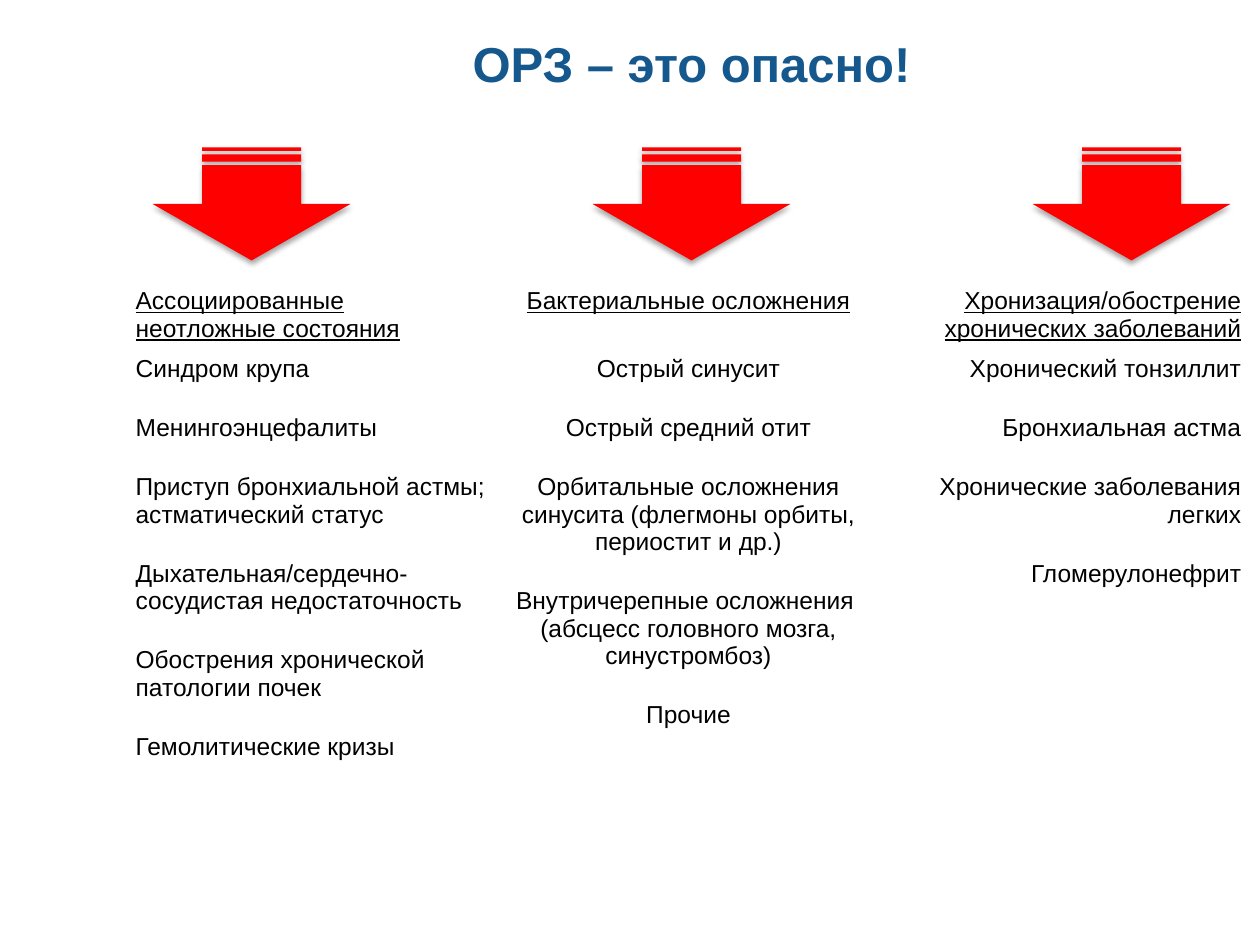
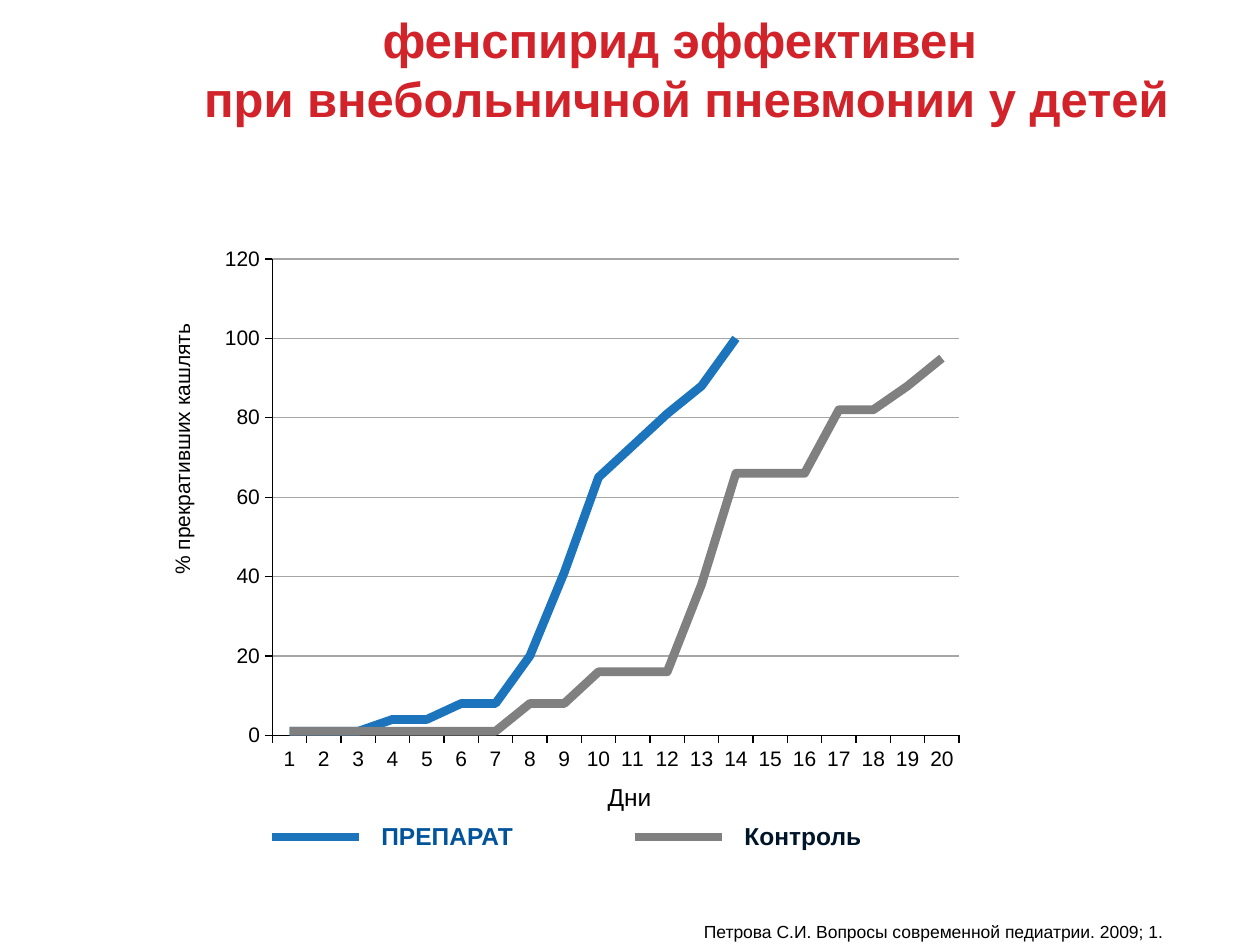
from lxml import etree
from pptx import Presentation, util as u
from pptx.chart.data import CategoryChartData
from pptx.dml.color import RGBColor
from pptx.enum import chart as ch, shapes, text
from pptx.oxml import parse_xml
from pptx.oxml.ns import nsdecls, qn

SCALE = 914400 / 126
FONT = "Arial"
COLORS = {"black": "000000", "navy": "15588D", "crimson": "D2232A",
          "red": "FF0000", "blue": "1C75BC", "gray": "808080",
          "grid": "A6A6A6", "drug": "01539C", "control": "001527"}
LEFT, CENTER, RIGHT = (text.PP_ALIGN.LEFT, text.PP_ALIGN.CENTER,
                       text.PP_ALIGN.RIGHT)

COLUMNS = [
    (LEFT, "Ассоциированные неотложные состояния",
     ["Синдром крупа",
      "Менингоэнцефалиты",
      "Приступ бронхиальной астмы; астматический статус",
      "Дыхательная/сердечно-сосудистая недостаточность",
      "Обострения хронической патологии почек",
      "Гемолитические кризы"]),
    (CENTER, "Бактериальные осложнения",
     ["Острый синусит",
      "Острый средний отит",
      "Орбитальные осложнения синусита (флегмоны орбиты, периостит и др.)",
      "Внутричерепные осложнения \n(абсцесс головного мозга, синустромбоз)",
      "Прочие"]),
    (RIGHT, "Хронизация/обострение хронических заболеваний",
     ["Хронический тонзиллит",
      "Бронхиальная астма",
      "Хронические заболевания легких",
      "Гломерулонефрит"]),
]

# name, line colour, label colour, label width, values
SERIES = [
    ("ПРЕПАРАТ", "blue", "drug", 188,
     [1, 1, 1, 4, 4, 8, 8, 20, 41, 65, 73, 81, 88, 100] + [None] * 6),
    ("Контроль", "gray", "control", 246,
     [1] * 7 + [8, 8, 16, 16, 16, 38, 66, 66, 66, 82, 82, 88, 95]),
]


def px(*nums):
    return [u.Emu(round(n * SCALE)) for n in nums]


def rgb(name):
    return RGBColor.from_string(COLORS[name])


def style(font, size, color="black", bold=False):
    font.name, font.size, font.bold = FONT, u.Pt(size), bold
    font.color.rgb = rgb(color)


def write(par, words, size, color="black", bold=False, align=LEFT):
    par.text = words
    par.alignment = align
    style(par.font, size, color, bold)


def add_title(slide, words, color, box):
    title = slide.shapes.title
    title.left, title.top, title.width, title.height = px(*box)
    frame = title.text_frame
    frame.auto_size = text.MSO_AUTO_SIZE.NONE
    frame.vertical_anchor = text.MSO_ANCHOR.MIDDLE
    write(frame.paragraphs[0], words, 28, color, True, CENTER)


def add_label(slide, words, box, size, color="black", bold=False,
              align=LEFT, wrap=True, turn=0):
    label = slide.shapes.add_textbox(*px(*box))
    label.rotation = turn
    label.text_frame.word_wrap = wrap
    write(label.text_frame.paragraphs[0], words, size, color, bold, align)


def add_arrow(slide, left):
    arrow = slide.shapes.add_shape(
        shapes.MSO_SHAPE.STRIPED_RIGHT_ARROW, *px(left, 105, 113, 198))
    arrow.rotation = 90
    arrow.fill.solid()
    arrow.fill.fore_color.rgb = rgb("red")
    arrow.line.fill.background()
    arrow._element.spPr.append(parse_xml(
        f'<a:effectLst {nsdecls("a")}><a:outerShdw blurRad="40000" '
        'dist="23000" dir="5400000" rotWithShape="0">'
        f'<a:srgbClr val="{COLORS["black"]}"><a:alpha val="35000"/>'
        '</a:srgbClr></a:outerShdw></a:effectLst>'))


def fill_cell(cell, lines, align, under=False, after=0):
    cell.fill.background()
    frame = cell.text_frame
    for i, line in enumerate(lines):
        par = frame.add_paragraph() if i else frame.paragraphs[0]
        write(par, line, 14, align=align)
        par.font.underline = under
        par.space_after = u.Pt(after)


def add_grid(slide):
    """Table of complications, one column per group."""
    table = slide.shapes.add_table(
        2, len(COLUMNS), *px(123, 281, 1131, 506)).table
    table.first_row = table.horz_banding = False
    for row, height in zip(table.rows, px(68, 438)):
        row.height = height
    for i, (align, head, items) in enumerate(COLUMNS):
        table.columns[i].width = px(377)[0]
        fill_cell(table.cell(0, i), [head], align, under=True)
        fill_cell(table.cell(1, i), items, align, after=18)


def set_axis(axis):
    axis.major_tick_mark = ch.XL_TICK_MARK.OUTSIDE
    axis.minor_tick_mark = ch.XL_TICK_MARK.NONE
    style(axis.tick_labels.font, 12)
    axis.format.line.color.rgb = rgb("black")
    axis.format.line.width = u.Pt(0.75)


def set_plot(chart, **place):
    """Fix the inner plot area as shares of the chart."""
    area = chart._chartSpace.chart.plotArea
    for old in area.findall(qn("c:layout")):
        area.remove(old)
    layout = etree.Element(qn("c:layout"))
    manual = etree.SubElement(layout, qn("c:manualLayout"))
    parts = {"layoutTarget": "inner", "xMode": "edge", "yMode": "edge"}
    for tag, val in {**parts, **place}.items():
        etree.SubElement(manual, qn(f"c:{tag}")).set("val", str(val))
    area.insert(0, layout)


def add_curve(slide):
    data = CategoryChartData()
    data.categories = [str(day) for day in range(1, 21)]
    for name, _, _, _, vals in SERIES:
        data.add_series(name, vals)
    chart = slide.shapes.add_chart(
        ch.XL_CHART_TYPE.LINE, *px(166, 239, 958, 556), data).chart
    chart.has_title = chart.has_legend = False
    style(chart.font, 18)
    set_plot(chart, x=0.111, y=0.036, w=0.717, h=0.857)
    days, share = chart.category_axis, chart.value_axis
    set_axis(days)
    set_axis(share)
    share.minimum_scale, share.maximum_scale, share.major_unit = 0, 120, 20
    grid = share.major_gridlines.format.line
    grid.color.rgb, grid.width = rgb("grid"), u.Pt(0.75)
    chart.plots[0].vary_by_categories = False
    for line, (_, color, *_) in zip(chart.plots[0].series, SERIES):
        line.smooth = False
        line.marker.style = ch.XL_MARKER_STYLE.NONE
        line.format.line.color.rgb = rgb(color)
        line.format.line.width = u.Pt(5)


def add_key(slide, left, name, color, ink, width):
    """Legend entry: a stroke and its label."""
    line = slide.shapes.add_connector(
        shapes.MSO_CONNECTOR.STRAIGHT, *px(left, 837, left + 87, 837))
    line.line.color.rgb = rgb(color)
    line.line.width = u.Pt(4.5)
    etree.SubElement(line._element.spPr, qn("a:effectLst"))
    add_label(slide, name, (left + 97, 815, width, 43), 14, ink, True)


def main():
    deck = Presentation()
    deck.slide_width, deck.slide_height = px(1260, 945)
    layout = deck.slide_layouts[5]

    risks = deck.slides.add_slide(layout)
    add_title(risks, "ОРЗ – это опасно!", "navy", (123, 0, 1137, 125))
    for i in range(len(COLUMNS)):
        add_arrow(risks, 195 + 440 * i)
    add_grid(risks)

    trial = deck.slides.add_slide(layout)
    add_title(trial, "фенспирид эффективен \nпри внебольничной пневмонии у детей",
              "crimson", (113, 0, 1147, 137))
    add_curve(trial)
    add_label(trial, "Дни", (595, 776, 69, 43), 14, align=CENTER, wrap=False)
    add_label(trial, "Петрова С.И. Вопросы современной педиатрии. 2009; 1.",
              (149, 915, 1026, 34), 10, align=RIGHT)
    for i, (name, color, ink, width, _) in enumerate(SERIES):
        add_key(trial, 272 + 363 * i, name, color, ink, width)
    add_label(trial, "% прекративших кашлять", (19, 430, 326, 38), 12,
              align=CENTER, turn=270)
    deck.save("out.pptx")


if __name__ == "__main__":
    main()
